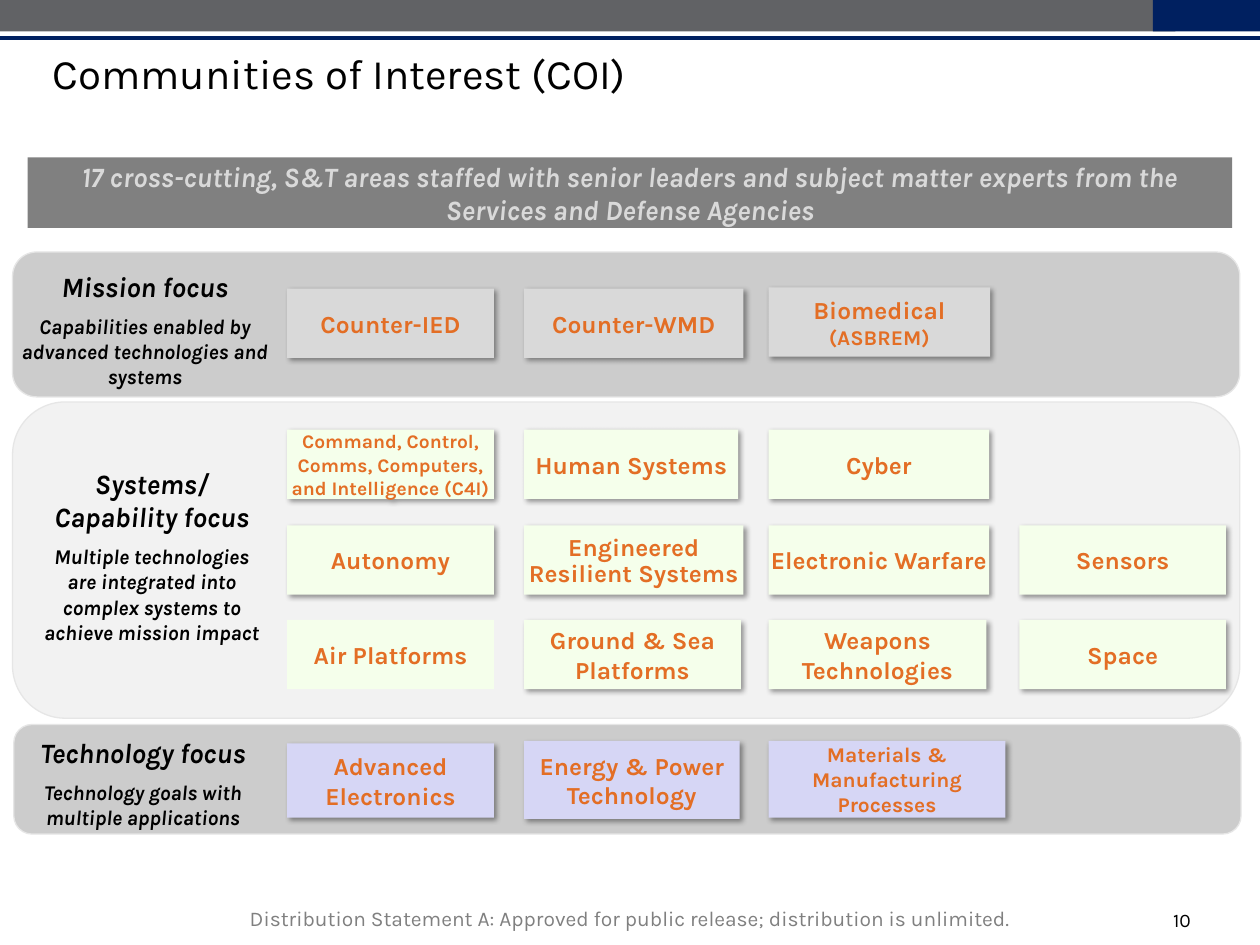
from dataclasses import dataclass

import pptx
import pptx.dml.color
import pptx.enum.shapes
import pptx.enum.text
import pptx.oxml
import pptx.oxml.ns
import pptx.util

Inches = pptx.util.Inches
Pt = pptx.util.Pt
SHAPE = pptx.enum.shapes.MSO_SHAPE
ANCHOR = pptx.enum.text.MSO_ANCHOR
ALIGN = pptx.enum.text.PP_ALIGN
Box = tuple[float, float, float, float]


@dataclass(frozen=True)
class Theme:
    font: str = "Karla"
    black: str = "000000"
    bar: str = "616265"
    navy: str = "002060"
    footer: str = "808080"
    banner_text: str = "D9D9D9"
    accent: str = "E36E25"
    band: str = "CCCCCC"
    band_light: str = "F2F2F2"
    band_line: str = "E6E6E6"
    mission: str = "D9D9D9"
    system: str = "F5FFEB"
    technology: str = "D6D6F5"
    title_pt: int = 24
    heading_pt: int = 16
    card_pt: int = 14
    body_pt: int = 12
    small_pt: int = 11


T = Theme()
COLS = (2.28, 4.16, 6.1, 8.09)


@dataclass(frozen=True)
class Card:
    label: str
    col: int
    top: float
    width: float = 1.64
    height: float = 0.55
    size: int = T.card_pt
    note: str = ""
    side: float = 0
    inset_top: float = 0.05
    spacing: float = 1.0
    shadow: bool = True


@dataclass(frozen=True)
class Band:
    box: Box
    fill: str
    text_box: Box
    heading: str
    body: str
    card_fill: str
    cards: tuple[Card, ...]


BANDS = (
    Band((0.1, 2, 9.74, 1.15), T.band, (0.07, 2.09, 2.16, 1.06), "Mission focus",
         "Capabilities enabled by advanced technologies and systems", T.mission, (
             Card("Counter-IED", 0, 2.29),
             Card("Counter-WMD", 1, 2.29, 1.74),
             Card("Biomedical ", 2, 2.28, 1.76, note="(ASBREM)"))),
    Band((0.1, 3.19, 9.74, 2.51), T.band_light, (0.22, 3.65, 1.97, 1.53),
         "Systems/ Capability focus",
         "Multiple technologies are integrated into complex systems to achieve mission impact",
         T.system, (
             Card("Command, Control, Comms, Computers, and Intelligence (C4I)", 0, 3.41,
                  size=T.small_pt),
             Card("Human Systems", 1, 3.41, 1.7),
             Card("Cyber", 2, 3.41, 1.75),
             Card("Autonomy", 0, 4.17),
             Card("Engineered Resilient Systems", 1, 4.17, 1.74, inset_top=0.07, spacing=0.9),
             Card("Electronic Warfare", 2, 4.17, 1.75),
             Card("Sensors", 3, 4.17),
             Card("Air Platforms", 0, 4.92, shadow=False),
             Card("Ground & Sea Platforms", 1, 4.92, 1.72, side=0.1),
             Card("Weapons Technologies", 2, 4.92, 1.73, side=0.1),
             Card("Space", 3, 4.92))),
    Band((0.11, 5.75, 9.74, 0.87), T.band, (0.06, 5.79, 2.15, 0.86), "Technology focus",
         "Technology goals with multiple applications", T.technology, (
             Card("Advanced Electronics", 0, 5.9, height=0.59, side=0.1),
             Card("Energy & Power Technology", 1, 5.88, 1.71, 0.62),
             Card("Materials & Manufacturing Processes", 2, 5.88, 1.88, 0.61, T.body_pt))),
)


def rgb(color: str) -> pptx.dml.color.RGBColor:
    return pptx.dml.color.RGBColor.from_string(color)


def style(font, size: float, color: str, bold: bool = False, italic: bool = False) -> None:
    font.name, font.size = T.font, Pt(size)
    font.bold, font.italic = bold, italic
    font.color.rgb = rgb(color)


def add_shape(s, kind, box: Box, fill: str, line: str = ""):
    sp = s.shapes.add_shape(kind, *map(Inches, box))
    sp.shadow.inherit = False
    sp.fill.solid()
    sp.fill.fore_color.rgb = rgb(fill)
    if line:
        sp.line.color.rgb = rgb(line)
        sp.line.width = Pt(0.75)
    else:
        sp.line.fill.background()
    return sp


def add_text(s, box: Box, text: str, size: float, color: str, align):
    tf = s.shapes.add_textbox(*map(Inches, box)).text_frame
    tf.word_wrap = True
    p = tf.paragraphs[0]
    p.text, p.alignment = text, align
    style(p.font, size, color)
    return p


def add_shadow(sp) -> None:
    effects = sp._element.spPr.find(pptx.oxml.ns.qn("a:effectLst"))
    effects.append(pptx.oxml.parse_xml(
        f'<a:outerShdw {pptx.oxml.ns.nsdecls("a")} blurRad="{Pt(3)}" dist="{Pt(2)}" '
        f'dir="2700000" algn="tl" rotWithShape="0"><a:srgbClr val="{T.black}">'
        '<a:alpha val="40000"/></a:srgbClr></a:outerShdw>'))


def add_card(s, card: Card, fill: str) -> None:
    sp = add_shape(s, SHAPE.RECTANGLE, (COLS[card.col], card.top, card.width, card.height), fill)
    if card.shadow:
        add_shadow(sp)
    tf = sp.text_frame
    tf.word_wrap, tf.vertical_anchor = True, ANCHOR.MIDDLE
    tf.margin_left = tf.margin_right = Inches(card.side)
    tf.margin_top, tf.margin_bottom = Inches(card.inset_top), Inches(0.05)
    p = tf.paragraphs[0]
    p.alignment, p.line_spacing = ALIGN.CENTER, card.spacing
    style(p.font, card.size, T.accent, bold=True)
    p.add_run().text = card.label
    if card.note:
        r = p.add_run()
        r.text, r.font.size = card.note, Pt(T.body_pt)


def add_band(s, band: Band) -> None:
    add_shape(s, SHAPE.ROUNDED_RECTANGLE, band.box, band.fill, T.band_line)
    tf = s.shapes.add_textbox(*map(Inches, band.text_box)).text_frame
    tf.word_wrap = True
    head, body = tf.paragraphs[0], tf.add_paragraph()
    body.space_before = Pt(6)
    for p, text, size in ((head, band.heading, T.heading_pt), (body, band.body, T.body_pt)):
        p.text, p.alignment = text, ALIGN.CENTER
        style(p.font, size, T.black, bold=True, italic=True)
    for card in band.cards:
        add_card(s, card, band.card_fill)


def main() -> None:
    prs = pptx.Presentation()
    prs.slide_width, prs.slide_height = Inches(10), Inches(7.5)
    s = prs.slides.add_slide(prs.slide_layouts[6])

    # Header bars and rule
    add_shape(s, SHAPE.RECTANGLE, (0, 0, 9.33, 0.25), T.bar)
    add_shape(s, SHAPE.RECTANGLE, (9.15, 0, 0.85, 0.25), T.navy)
    rule = s.shapes.add_connector(pptx.enum.shapes.MSO_CONNECTOR.STRAIGHT,
                                  Inches(0), Inches(0.3), Inches(10), Inches(0.3))
    rule.line.color.rgb, rule.line.width = rgb(T.navy), Pt(2.25)
    rule._element.spPr.append(pptx.oxml.parse_xml(
        f'<a:effectLst {pptx.oxml.ns.nsdecls("a")}/>'))

    # Title and banner
    title = add_text(s, (0.32, 0.45, 8.85, 0.88), "Communities of Interest (COI)",
                     T.title_pt, T.black, ALIGN.LEFT)
    title.line_spacing = Pt(20)
    tf = add_shape(s, SHAPE.RECTANGLE, (0.22, 1.25, 9.56, 0.56), T.footer).text_frame
    tf.word_wrap, tf.vertical_anchor = True, ANCHOR.MIDDLE
    p = tf.paragraphs[0]
    p.text = ("17 cross-cutting, S&T areas staffed with senior leaders and subject matter "
              "experts from the Services and Defense Agencies")
    p.alignment = ALIGN.CENTER
    style(p.font, T.heading_pt, T.banner_text, bold=True, italic=True)

    # Focus bands with their cards
    for band in BANDS:
        add_band(s, band)

    # Footer
    add_text(s, (1.26, 7.14, 7.48, 0.3),
             "Distribution Statement A: Approved for public release; distribution is unlimited.",
             T.body_pt, T.footer, ALIGN.CENTER)
    add_text(s, (8.76, 7.16, 0.79, 0.29), "10", T.small_pt, T.black, ALIGN.RIGHT)
    prs.save("out.pptx")


if __name__ == "__main__":
    main()
